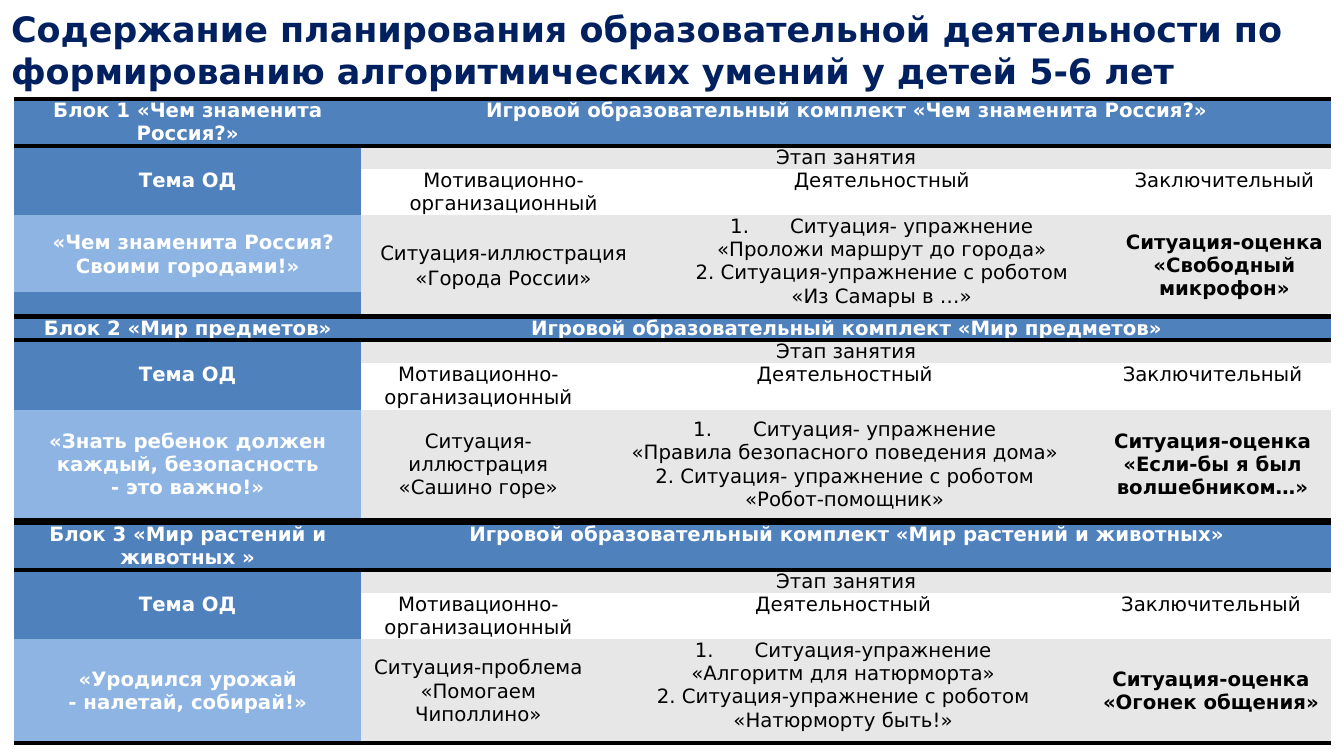
import dataclasses

import lxml.etree
import pptx
import pptx.dml.color
import pptx.enum.text
import pptx.oxml
import pptx.oxml.ns
import pptx.util

ANCHOR = pptx.enum.text.MSO_ANCHOR
ALIGN = pptx.enum.text.PP_ALIGN
PLAIN_TABLE_STYLE = "{2D5ABB26-0587-4C30-8999-92F81FD0307C}"

# The slide is a grid of 853 columns by 479 rows
GRID_STEP = pptx.util.Inches(0.01)
SLIDE_COLUMNS, SLIDE_ROWS = 853, 479
TABLE_LEFT, TABLE_WIDTH = 9, 837
CELL_MARGIN = 5
NUMBER_INDENT = 38


@dataclasses.dataclass(frozen=True)
class Theme:
    font: str = "DejaVu Sans"
    title_size: int = 16
    table_size: int = 9
    title: str = "002060"
    header: str = "4F81BD"
    topic: str = "8EB4E3"
    band: str = "E7E7E7"
    white: str = "FFFFFF"
    black: str = "000000"
    rule_width: int = 2


THEME = Theme()


@dataclasses.dataclass(frozen=True)
class Style:
    fill: str
    color: str
    bold: bool = False
    anchor: ANCHOR = ANCHOR.TOP
    line_spacing: float = 1.0
    first_indent: int = 0
    numbered: bool = False


HEADER = Style(THEME.header, THEME.white, bold=True)
THEME_LABEL = dataclasses.replace(HEADER, anchor=ANCHOR.MIDDLE)
TOPIC = dataclasses.replace(THEME_LABEL, fill=THEME.topic)
STAGE = Style(THEME.band, THEME.black)
STAGE_NAME = Style(THEME.white, THEME.black)
MOTIVATION = dataclasses.replace(STAGE, anchor=ANCHOR.MIDDLE)
ACTIVITY = dataclasses.replace(STAGE, numbered=True)
CLOSING = dataclasses.replace(MOTIVATION, bold=True)


@dataclasses.dataclass(frozen=True)
class Block:
    top: int
    columns: tuple[int, ...]
    rows: tuple[int, ...]
    name: str
    kit: str
    topic: list[str]
    motivation: list[str]
    activity: list[str]
    closing: list[str]
    activity_anchor: ANCHOR = ANCHOR.TOP
    line_spacing: float = 1.0
    topic_indent: int = 0


BLOCKS = [
    Block(63, (220, 181, 299, 136), (27, 14, 27, 49, 15),
          "«Чем знаменита Россия?»", "«Чем знаменита Россия?»",
          ["«Чем знаменита Россия? Своими городами!»"],
          ["Ситуация-иллюстрация", "«Города России»"],
          ["Ситуация- упражнение", "«Проложи маршрут до города»",
           "2. Ситуация-упражнение с роботом", "«Из Самары в …»"],
          ["Ситуация-оценка", "«Свободный микрофон»"],
          line_spacing=1.07, topic_indent=7),
    Block(201, (220, 149, 316, 151), (14, 14, 28, 70),
          "«Мир предметов»", "«Мир предметов»",
          ["«Знать ребенок должен каждый, безопасность", "- это важно!»"],
          ["Ситуация- иллюстрация", "«Сашино горе»"],
          ["Ситуация- упражнение", "«Правила безопасного поведения дома»",
           "2. Ситуация- упражнение с роботом", "«Робот-помощник»"],
          ["Ситуация-оценка", "«Если-бы я был волшебником…»"],
          activity_anchor=ANCHOR.MIDDLE),
    Block(332, (220, 149, 314, 153), (26, 13, 26, 66),
          "«Мир растений и животных »", "«Мир растений и животных»",
          ["«Уродился урожай", "- налетай, собирай!»"],
          ["Ситуация-проблема", "«Помогаем Чиполлино»"],
          ["Ситуация-упражнение", "«Алгоритм для натюрморта»",
           "2. Ситуация-упражнение с роботом", "«Натюрморту быть!»"],
          ["Ситуация-оценка", "«Огонек общения»"]),
]


def grid(steps: int) -> pptx.util.Emu:
    return pptx.util.Emu(steps * GRID_STEP)


def set_font(font, size: int, color: str, bold: bool) -> None:
    font.name = THEME.font
    font.size = pptx.util.Pt(size)
    font.bold = bold
    font.color.rgb = pptx.dml.color.RGBColor.from_string(color)


def indent_first_line(paragraph, left: int, first: int) -> lxml.etree._Element:
    properties = paragraph._p.get_or_add_pPr()
    properties.set("marL", str(grid(left)))
    properties.set("indent", str(grid(first)))
    return properties


def number_paragraph(paragraph) -> None:
    properties = indent_first_line(paragraph, NUMBER_INDENT, -NUMBER_INDENT)
    bullet = pptx.oxml.parse_xml(
        f'<a:buAutoNum {pptx.oxml.ns.nsdecls("a")} type="arabicPeriod"/>')
    properties.find(pptx.oxml.ns.qn("a:defRPr")).addprevious(bullet)


def draw_rule(cell, side: str) -> None:
    cell._tc.get_or_add_tcPr().insert(0, pptx.oxml.parse_xml(
        f'<a:{side} {pptx.oxml.ns.nsdecls("a")} w="{pptx.util.Pt(THEME.rule_width)}">'
        f'<a:solidFill><a:srgbClr val="{THEME.black}"/></a:solidFill></a:{side}>'))


def write_cell(cell, lines: list[str], style: Style) -> None:
    cell.fill.solid()
    cell.fill.fore_color.rgb = pptx.dml.color.RGBColor.from_string(style.fill)
    cell.margin_left = cell.margin_right = grid(CELL_MARGIN)
    cell.margin_top = cell.margin_bottom = 0
    cell.vertical_anchor = style.anchor
    cell.text = "\n".join(lines)
    for paragraph in cell.text_frame.paragraphs:
        paragraph.alignment = ALIGN.CENTER
        paragraph.line_spacing = style.line_spacing
        set_font(paragraph.font, THEME.table_size, style.color, style.bold)
        if not paragraph.runs:
            ending = lxml.etree.SubElement(paragraph._p, pptx.oxml.ns.qn("a:endParaRPr"))
            ending.set("sz", str(THEME.table_size * 100))
    first = cell.text_frame.paragraphs[0]
    if style.numbered:
        number_paragraph(first)
    elif style.first_indent:
        indent_first_line(first, 0, style.first_indent)


def add_title(slide, text: str) -> None:
    title = slide.shapes.title
    title.left = title.top = 0
    title.width, title.height = grid(834), grid(63)
    frame = title.text_frame
    frame.text = text
    frame.word_wrap = True
    frame.auto_size = pptx.enum.text.MSO_AUTO_SIZE.NONE
    frame.vertical_anchor = ANCHOR.TOP
    frame.margin_left, frame.margin_right = grid(7), grid(10)
    frame.margin_top = frame.margin_bottom = grid(5)
    paragraph = frame.paragraphs[0]
    paragraph.alignment = ALIGN.LEFT
    set_font(paragraph.font, THEME.title_size, THEME.title, True)


def add_block(slide, number: int, block: Block) -> None:
    last_row, last_column = len(block.rows) - 1, len(block.columns) - 1
    frame = slide.shapes.add_table(
        len(block.rows), len(block.columns), grid(TABLE_LEFT), grid(block.top),
        grid(TABLE_WIDTH), grid(sum(block.rows)))
    table = frame.table
    table.first_row = table.horz_banding = False
    table._tbl.tblPr.find(pptx.oxml.ns.qn("a:tableStyleId")).text = PLAIN_TABLE_STYLE
    for column, width in zip(table.columns, block.columns):
        column.width = grid(width)
    for row, height in zip(table.rows, block.rows):
        row.height = grid(height)

    # Default look, then the merged areas
    for cell in table.iter_cells():
        write_cell(cell, [], HEADER)
    for row in (0, 1):
        table.cell(row, 1).merge(table.cell(row, last_column))
    table.cell(1, 0).merge(table.cell(2, 0))
    if last_row > 3:
        for column in range(1, last_column + 1):
            table.cell(3, column).merge(table.cell(last_row, column))

    # Wording
    spacing = block.line_spacing
    contents = {
        (0, 0): ([f"Блок {number} {block.name}"], HEADER),
        (0, 1): ([f"Игровой образовательный комплект {block.kit}"], HEADER),
        (1, 0): (["Тема ОД"], THEME_LABEL),
        (1, 1): (["Этап занятия"], STAGE),
        (2, 1): (["Мотивационно-организационный"], STAGE_NAME),
        (2, 2): (["Деятельностный"], STAGE_NAME),
        (2, 3): (["Заключительный"], STAGE_NAME),
        (3, 0): (block.topic, dataclasses.replace(
            TOPIC, line_spacing=spacing, first_indent=block.topic_indent)),
        (3, 1): (block.motivation, dataclasses.replace(MOTIVATION, line_spacing=spacing)),
        (3, 2): (block.activity, dataclasses.replace(ACTIVITY, anchor=block.activity_anchor)),
        (3, 3): (block.closing, CLOSING),
    }
    for (row, column), (lines, style) in contents.items():
        write_cell(table.cell(row, column), lines, style)

    # Black rules around the header and under the block
    for column in range(last_column + 1):
        draw_rule(table.cell(0, column), "lnB")
        draw_rule(table.cell(0, column), "lnT")
        draw_rule(table.cell(last_row, column), "lnB")
        if last_row > 3 and column:
            draw_rule(table.cell(3, column), "lnB")


def main() -> None:
    presentation = pptx.Presentation()
    presentation.slide_width = grid(SLIDE_COLUMNS)
    presentation.slide_height = grid(SLIDE_ROWS)
    slide = presentation.slides.add_slide(presentation.slide_layouts.get_by_name("Title Only"))
    add_title(slide, "Содержание планирования образовательной деятельности по "
                     "формированию алгоритмических умений у детей 5-6 лет")
    for number, block in enumerate(BLOCKS, start=1):
        add_block(slide, number, block)
    presentation.save("out.pptx")


if __name__ == "__main__":
    main()
